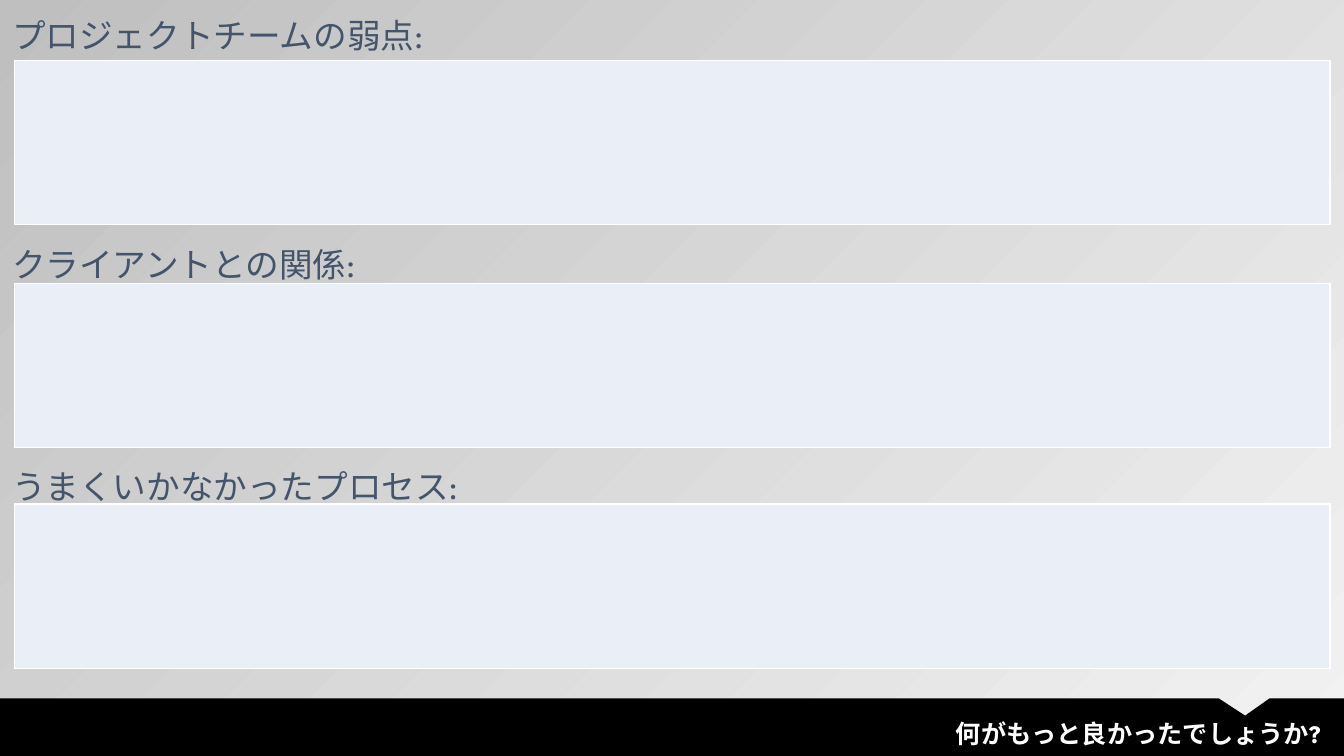
from dataclasses import dataclass

from lxml.etree import SubElement
from pptx import Presentation
from pptx.dml.color import RGBColor
from pptx.enum.text import MSO_AUTO_SIZE, PP_ALIGN
from pptx.oxml import parse_xml
from pptx.oxml.ns import nsdecls, qn
from pptx.slide import Slide
from pptx.text.text import _Paragraph
from pptx.util import Emu, Length, Pt

SCALE = 9144
WIDTH, HEIGHT = 1333, 750
FONT = "League Spartan"
BAR = [(0, 693), (1209, 693), (1235, 710), (1259, 693), (WIDTH, 693), (WIDTH, HEIGHT), (0, HEIGHT)]


@dataclass(frozen=True)
class Section:
    """A heading and the empty answer box below it."""

    heading: str
    top: int
    height: int
    box_top: int
    spacing: float | Length


SECTIONS = [
    Section("プロジェクトチームの弱点:", 19, 44, 60, Pt(21.5)),
    Section("クライアントとの関係:", 228, 57, 281, 1.2),
    Section("うまくいかなかったプロセス:", 448, 57, 500, 1.2),
]


def px(n: int) -> Emu:
    """Turn pixels into EMU."""
    return Emu(n * SCALE)


def rgb(color: str) -> RGBColor:
    """Turn a hex string into a colour."""
    return RGBColor.from_string(color)


def add_background(s: Slide) -> None:
    """Fill the background with a diagonal grey gradient."""
    fill = s.background.fill
    fill.gradient()
    fill.gradient_angle = 135
    for stop, color in zip(fill.gradient_stops, ("F2F2F2", "BFBFBF")):
        stop.color.rgb = rgb(color)


def add_bar(s: Slide) -> None:
    """Draw the notched black bar at the foot."""
    builder = s.shapes.build_freeform(*BAR[0], scale=SCALE)
    builder.add_line_segments(BAR[1:], close=True)
    sp = builder.convert_to_shape()
    sp.shadow.inherit = False
    sp.fill.solid()
    sp.fill.fore_color.rgb = rgb("000000")
    sp.line.fill.background()


def add_text(s: Slide, text: str, box: tuple[int, int, int, int], size: int,
             color: str, margins: tuple[int, int], bold: bool = False) -> _Paragraph:
    """Add a one-paragraph text box and return its paragraph."""
    tf = s.shapes.add_textbox(*map(px, box)).text_frame
    tf.word_wrap = True
    tf.auto_size = MSO_AUTO_SIZE.SHAPE_TO_FIT_TEXT
    tf.margin_left = tf.margin_right = px(margins[0])
    tf.margin_top = tf.margin_bottom = px(margins[1])
    tf.text = text
    p = tf.paragraphs[0]
    font = p.runs[0].font
    font.name, font.size, font.bold = FONT, Pt(size), bold
    font.color.rgb = rgb(color)
    return p


def add_answer_box(s: Slide, top: int) -> None:
    """Add a one-cell table with a thin white border."""
    table = s.shapes.add_table(1, 1, px(14), px(top), px(1305), px(163)).table
    table.first_row = table.horz_banding = False
    cell = table.cell(0, 0)
    tc_pr = cell._tc.get_or_add_tcPr()
    for side in "LRTB":
        tc_pr.append(parse_xml(
            f'<a:ln{side} {nsdecls("a")} w="12700"><a:solidFill>'
            f'<a:srgbClr val="FFFFFF"/></a:solidFill></a:ln{side}>'))
    cell.fill.solid()
    cell.fill.fore_color.rgb = rgb("EAEFF7")


def add_section(s: Slide, section: Section) -> None:
    """Add an answer box and its heading."""
    add_answer_box(s, section.box_top)
    p = add_text(s, section.heading, (0, section.top, 763, section.height), 24, "44546A", (12, 6))
    p.line_spacing = section.spacing
    before = SubElement(p._p.get_or_add_pPr(), qn("a:spcBef"))
    SubElement(before, qn("a:spcPct"), val="20000")


def main() -> None:
    """Build and save the slide."""
    prs = Presentation()
    prs.slide_width, prs.slide_height = px(WIDTH), px(HEIGHT)
    s = prs.slides.add_slide(prs.slide_layouts[6])
    add_background(s)
    add_bar(s)
    title = add_text(s, "何がもっと良かったでしょうか?", (414, 708, 906, 40), 18, "FFFFFF", (10, 5), bold=True)
    title.alignment = PP_ALIGN.RIGHT
    for section in SECTIONS:
        add_section(s, section)
    prs.save("out.pptx")


if __name__ == "__main__":
    main()
